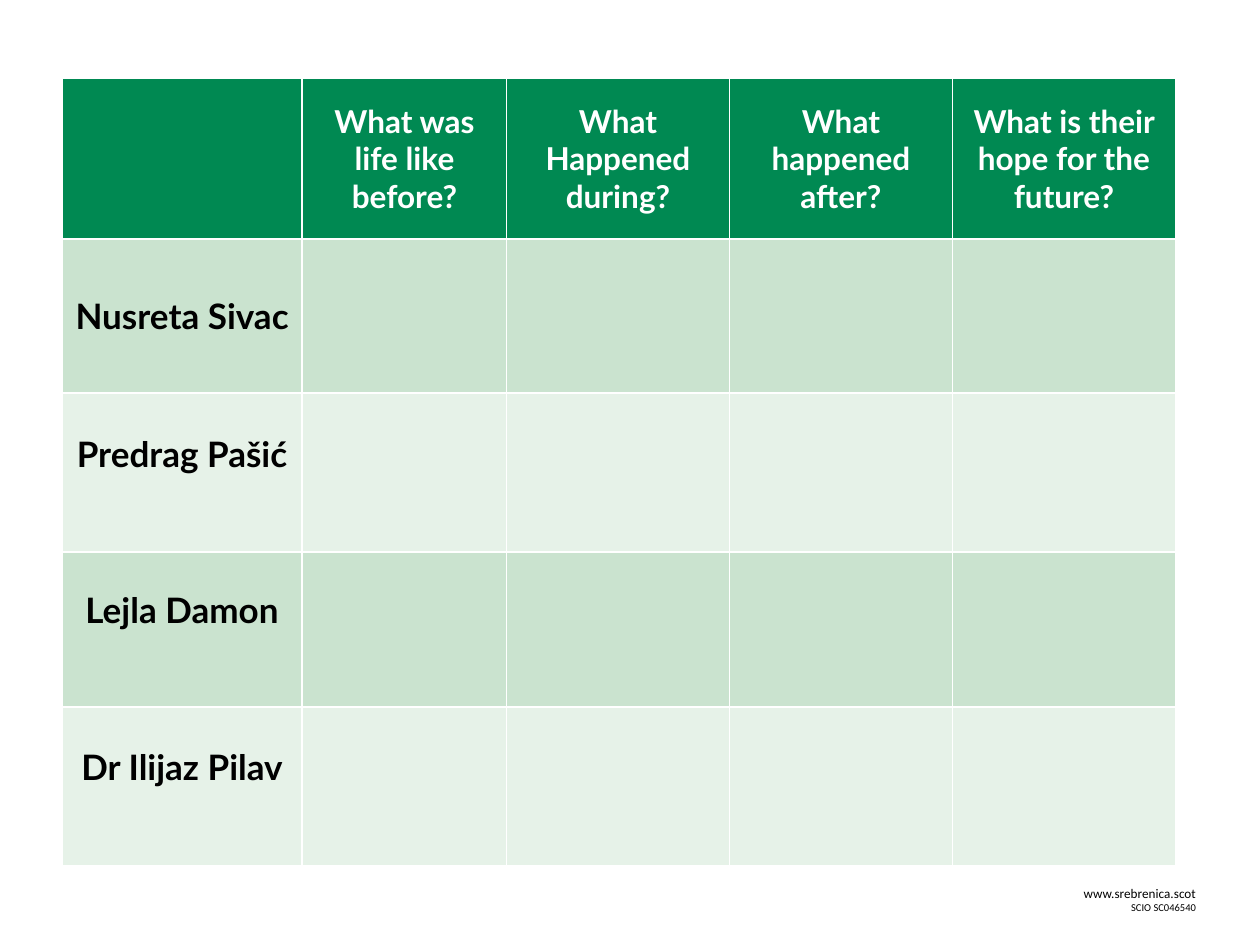
from lxml import etree
from pptx import Presentation
from pptx.dml.color import RGBColor
from pptx.enum.text import MSO_ANCHOR, PP_ALIGN
from pptx.oxml.ns import qn
from pptx.util import Inches, Pt

CENTER, RIGHT = PP_ALIGN.CENTER, PP_ALIGN.RIGHT
MIDDLE = MSO_ANCHOR.MIDDLE
BLANK_LAYOUT = 6

HEADINGS = [
    [],
    ["What was life like before?"],
    ["What", "Happened", "during?"],
    ["What", "happened", "after?"],
    ["What is their hope for the future?"],
]
PEOPLE = ["Nusreta Sivac", "Predrag Pašić", "Lejla Damon", "Dr Ilijaz Pilav"]
FOOTER = [("www.srebrenica.scot", 7.5), ("SCIO SC046540", 6)]

COLUMNS = [1.91, 1.62, 1.77, 1.77, 1.77]
ROWS = [1.28, 1.22, 1.26, 1.23, 1.26]
HEADER_FILL = "008952"
BAND_FILLS = ["CAE3CF", "E6F2E8"]
HEADING_FONT = {"name": "Lato", "size": Pt(18), "bold": True}
PERSON_FONT = {"name": "Lato", "size": Pt(20), "bold": True}
BORDER_SIDES = ["a:lnL", "a:lnR", "a:lnT", "a:lnB"]
RAISED_MARGIN = 0.34


def color(value):
    return RGBColor.from_string(value)


def write(frame, lines, alignment, text_color):
    for index, (text, font) in enumerate(lines):
        para = frame.add_paragraph() if index else frame.paragraphs[0]
        para.alignment = alignment
        span = para.add_run()
        span.text = text
        span.font.color.rgb = color(text_color)
        for name, value in font.items():
            setattr(span.font, name, value)


def format_cell(cell, fill):
    properties = cell._tc.get_or_add_tcPr()
    for side in BORDER_SIDES:
        line = etree.SubElement(properties, qn(side), w=str(Pt(1.22)))
        solid = etree.SubElement(line, qn("a:solidFill"))
        etree.SubElement(solid, qn("a:srgbClr"), val="FFFFFF")
    cell.fill.solid()
    cell.fill.fore_color.rgb = color(fill)
    cell.vertical_anchor = MIDDLE
    margins = {"margin_left": 0.08, "margin_right": 0.08,
               "margin_top": 0.04, "margin_bottom": 0.04}
    for name, value in margins.items():
        setattr(cell, name, Inches(value))


def add_grid(page):
    grid = page.shapes.add_table(
        len(ROWS), len(COLUMNS), Inches(0.49), Inches(0.62),
        Inches(sum(COLUMNS)), Inches(sum(ROWS))).table
    for column, width in zip(grid.columns, COLUMNS):
        column.width = Inches(width)
    for index, (row, height) in enumerate(zip(grid.rows, ROWS)):
        row.height = Inches(height)
        for cell in row.cells:
            format_cell(cell, BAND_FILLS[(index - 1) % 2] if index else HEADER_FILL)
    for column, lines in enumerate(HEADINGS):
        write(grid.cell(0, column).text_frame,
              [(line, HEADING_FONT) for line in lines], CENTER, "FFFFFF")
    for row, person in enumerate(PEOPLE, 1):
        cell = grid.cell(row, 0)
        write(cell.text_frame, [(person, PERSON_FONT)], CENTER, "000000")
        if row > 1:
            cell.margin_bottom = Inches(RAISED_MARGIN)


def add_footer(page):
    box = page.shapes.add_textbox(Inches(7.06), Inches(6.98), Inches(2.53), Inches(0.4))
    box.text_frame.word_wrap = True
    lines = [(text, {"name": "Calibri", "size": Pt(size)}) for text, size in FOOTER]
    write(box.text_frame, lines, RIGHT, "000000")


def main():
    deck = Presentation()
    deck.slide_width, deck.slide_height = Inches(10), Inches(7.5)
    page = deck.slides.add_slide(deck.slide_layouts[BLANK_LAYOUT])
    add_footer(page)
    add_grid(page)
    deck.save("out.pptx")


if __name__ == "__main__":
    main()
